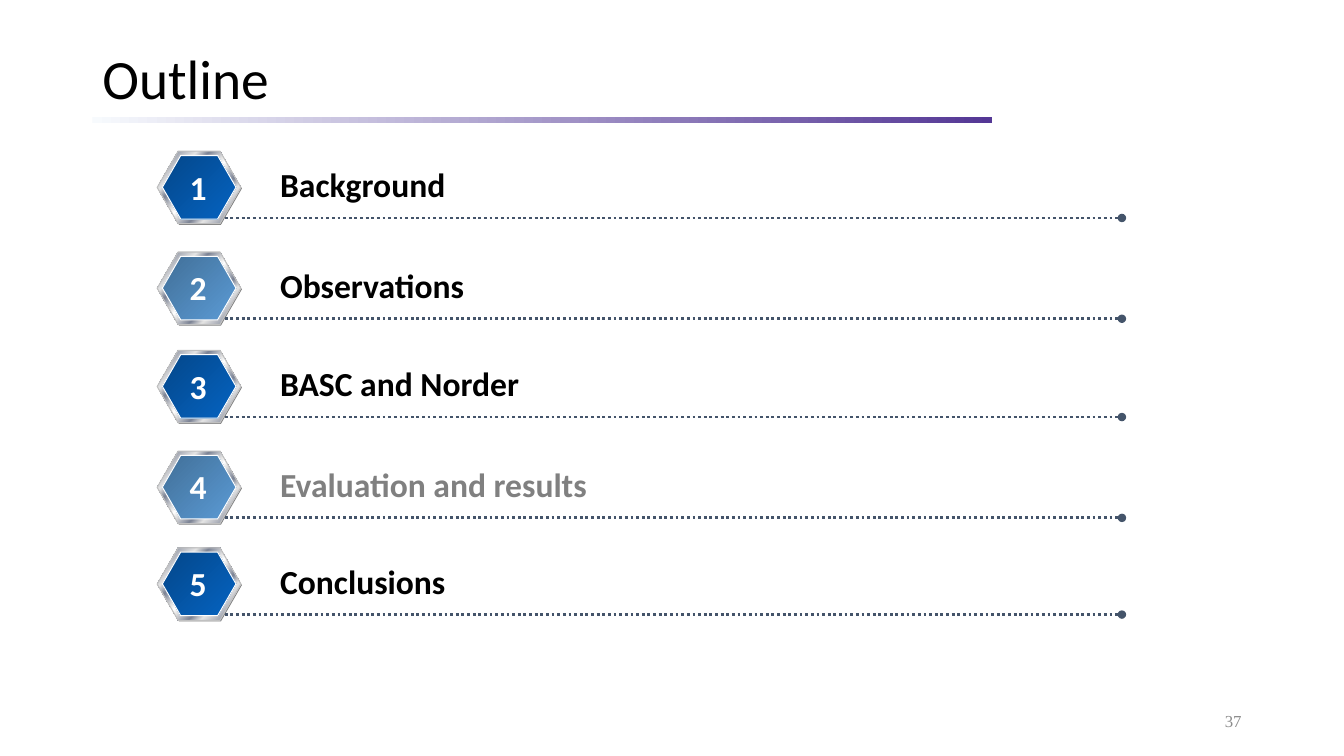
from lxml.etree import SubElement
from pptx import Presentation
from pptx.dml.color import RGBColor
from pptx.enum.dml import MSO_LINE_DASH_STYLE as Dash
from pptx.enum.shapes import MSO_CONNECTOR as Connector, MSO_SHAPE as Shape
from pptx.enum.text import MSO_ANCHOR as Anchor, PP_ALIGN as Align
from pptx.oxml.ns import qn
from pptx.util import Pt

TITLE_ONLY = 5
METAL = [(0, "E6E6E6"), (7, "7D8496"), (26, "E6E6E6"), (34, "7D8496"),
         (46, "E6E6E6"), (50, "FFFFFF"), (54, "E6E6E6"), (66, "7D8496"),
         (74, "E6E6E6"), (93, "7D8496"), (100, "E6E6E6")]
BADGE_BLUES = [[(0, "04478A"), (100, "0563C1")],
               [(0, "416F98"), (100, "5B9BD5")]]
# Row top, label, label colour
TOPICS = [
    (108, "Background", "000000"),
    (180, "Observations", "000000"),
    (250.2, "BASC and Norder", "000000"),
    (322.2, "Evaluation and results", "808080"),
    (391.3, "Conclusions", "000000"),
]


def color(value):
    return RGBColor.from_string(value)


def write(frame, text, size=24, font="Calibri", fill="000000", bold=False,
          align=Align.LEFT, anchor=Anchor.TOP, spacing=None):
    frame.word_wrap = True
    frame.vertical_anchor = anchor
    paragraph = frame.paragraphs[0]
    paragraph.alignment = align
    paragraph.line_spacing = spacing
    run = paragraph.add_run()
    run.text = text
    run.font.size = Pt(size)
    run.font.name = font
    run.font.bold = bold
    run.font.color.rgb = color(fill)


def fill_gradient(shape, stops, angle):
    """Fill with (percent, colour) stops; the angle runs clockwise."""
    shape.fill.gradient()
    shape.fill.gradient_angle = (360 - angle) % 360
    stop_list = shape._element.spPr.find(".//" + qn("a:gsLst"))
    stop_list.clear()
    for percent, value in stops:
        stop = SubElement(stop_list, qn("a:gs"), pos=str(percent * 1000))
        SubElement(stop, qn("a:srgbClr"), val=value)


class OutlineSlide:
    """Draws the elements of the outline on one slide."""

    def __init__(self, slide):
        self.slide = slide
        self.rule_color = "44546A"

    def title(self, text):
        title = self.slide.shapes.title
        title.left, title.top, title.width, title.height = map(Pt, (66, 31, 828, 54))
        write(title.text_frame, text, size=39.6, anchor=Anchor.MIDDLE, spacing=0.9)

    def text(self, box, text, **style):
        shape = self.slide.shapes.add_textbox(*map(Pt, box))
        write(shape.text_frame, text, **style)

    def shape(self, kind, box, fill, line=None, angle=0, parent=None):
        """Add a shape whose fill is a colour or a list of gradient stops."""
        shape = (parent or self.slide).shapes.add_shape(kind, *map(Pt, box))
        shape.shadow.inherit = False
        if isinstance(fill, str):
            shape.fill.solid()
            shape.fill.fore_color.rgb = color(fill)
        else:
            fill_gradient(shape, fill, angle)
        if line:
            shape.line.color.rgb = color(line)
            shape.line.width = Pt(0.75)
        else:
            shape.line.fill.background()
        return shape

    def badge(self, top, blues):
        group = self.slide.shapes.add_group_shape()
        layers = [((113, top + 0.8, 59.8, 51.8), "808080", None),
                  ((112.3, top, 59.8, 51.8), METAL, "C0C0C0"),
                  ((116, top + 3.1, 52.6, 45.4), blues, "FFFFFF")]
        for box, fill, line in layers:
            hexagon = self.shape(Shape.HEXAGON, box, fill, line, 45, group)
            hexagon.adjustments[0] = 0.289

    def dotted_rule(self, top):
        connector = self.slide.shapes.add_connector(
            Connector.STRAIGHT, Pt(160.6), Pt(top), Pt(801.4), Pt(top))
        connector.line.color.rgb = color(self.rule_color)
        connector.line.width = Pt(2)
        connector.line.dash_style = Dash.ROUND_DOT
        properties = connector._element.spPr
        SubElement(properties.get_or_add_ln(), qn("a:tailEnd"), type="oval")
        SubElement(properties, qn("a:effectLst"))

    def topic(self, number, top, label, fill):
        self.badge(top, BADGE_BLUES[(number - 1) % 2])
        self.dotted_rule(top + 47.7)
        self.text((193, top + 5.8, 400, 36), label, fill=fill, bold=True)
        self.text((127.4, top + 7.4, 28.4, 36.4), str(number), fill="FFFFFF",
                  bold=True, align=Align.CENTER)


def main():
    presentation = Presentation()
    presentation.slide_width, presentation.slide_height = Pt(960), Pt(540)
    layout = presentation.slide_layouts[TITLE_ONLY]
    outline = OutlineSlide(presentation.slides.add_slide(layout))

    outline.shape(Shape.RECTANGLE, (66, 83.8, 642.4, 4),
                  [(0, "F7FAFD"), (100, "543795")])
    outline.text((678, 500.5, 216, 28.8), "37", size=12, font="Times New Roman",
                 fill="8C8C8C", align=Align.RIGHT, anchor=Anchor.MIDDLE)
    outline.title("Outline")
    for number, topic in enumerate(TOPICS, 1):
        outline.topic(number, *topic)
    presentation.save("out.pptx")


if __name__ == "__main__":
    main()
